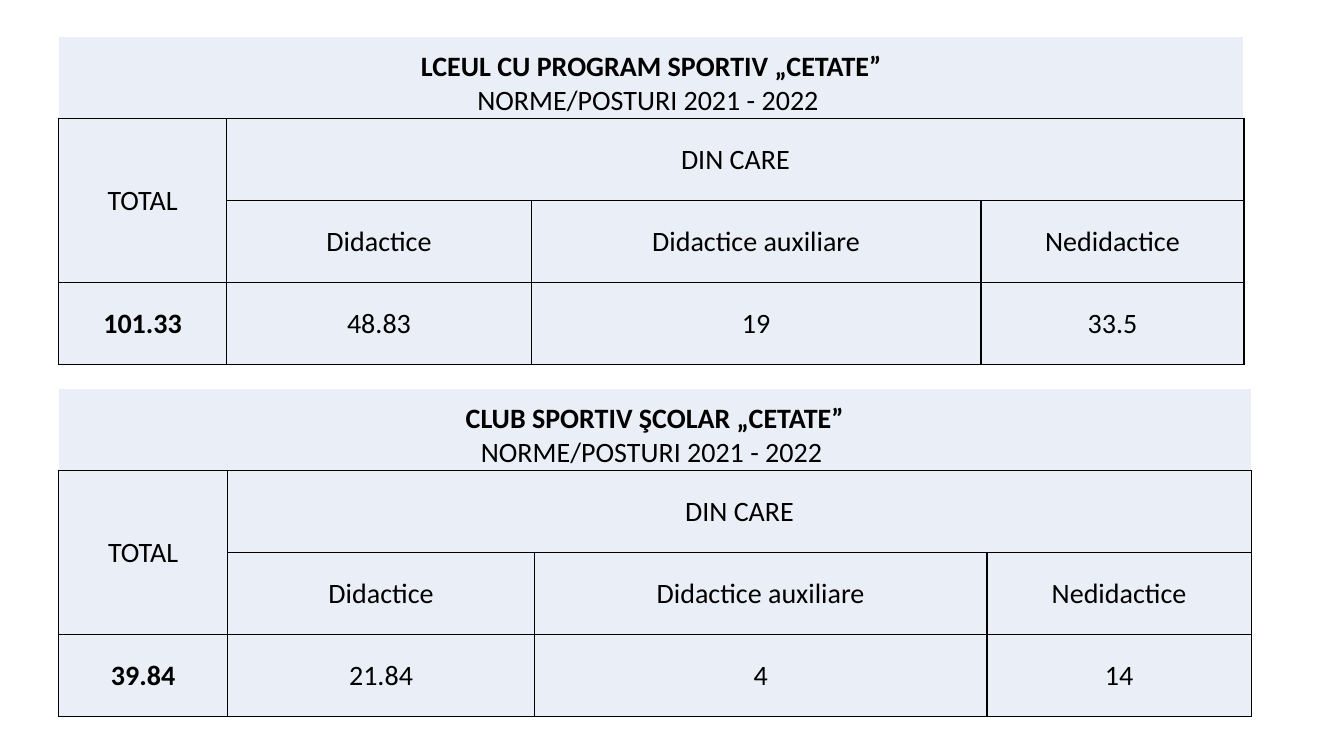
from dataclasses import dataclass

from lxml import etree
from pptx import Presentation
from pptx.dml.color import RGBColor
from pptx.enum.text import MSO_ANCHOR, PP_ALIGN
from pptx.oxml.ns import qn
from pptx.util import Inches, Pt

CENTER = PP_ALIGN.CENTER
MIDDLE, BOTTOM = MSO_ANCHOR.MIDDLE, MSO_ANCHOR.BOTTOM


@dataclass(frozen=True)
class Theme:
    """Colours, type and line sizes of the slide."""
    font: str = "Calibri"
    size: float = 20
    line: float = 1
    ink: str = "000000"
    paper: str = "FFFFFF"
    fill: str = "EAEFF7"


class Deck:
    """Draws styled elements on the current slide."""

    def __init__(self, prs, theme):
        self.theme = theme
        self.s = prs.slides.add_slide(prs.slide_layouts[6])

    def borders(self, cell, colors):
        """Draw the left, right, top and bottom borders of a cell."""
        tc_pr = cell._tc.get_or_add_tcPr()
        for side, color in zip("LRTB", colors):
            ln = etree.SubElement(tc_pr, qn(f"a:ln{side}"), w=str(Pt(self.theme.line)))
            solid = etree.SubElement(ln, qn("a:solidFill"))
            etree.SubElement(solid, qn("a:srgbClr"), val=color)

    def text(self, cell, lines, bold, anchor):
        """Write centred lines in a cell, the first one bold if asked."""
        inset = Inches(0.01)
        layout = {"margin_left": inset, "margin_right": inset, "margin_top": inset,
                  "margin_bottom": 0, "vertical_anchor": anchor}
        for name, value in layout.items():
            setattr(cell, name, value)
        tf = cell.text_frame
        for i, line in enumerate(lines):
            p = tf.add_paragraph() if i else tf.paragraphs[0]
            p.alignment = CENTER
            r = p.add_run()
            r.text = line
            style = {"name": self.theme.font, "size": Pt(self.theme.size),
                     "bold": bold and i == 0}
            for name, value in style.items():
                setattr(r.font, name, value)
            r.font.color.rgb = RGBColor.from_string(self.theme.ink)

    def staff_table(self, top, widths, title, values):
        """Add a table of posts with a title, two header rows and the values."""
        t = self.theme
        rows = [[title], ["TOTAL", "DIN CARE"],
                ["", "Didactice", "Didactice auxiliare", "Nedidactice"], values]
        height = Inches(3.26)
        frame = self.s.shapes.add_table(len(rows), len(widths), Inches(0.58), Inches(top),
                                        Inches(sum(widths)), height)
        table = frame.table
        for column, width in zip(table.columns, widths):
            column.width = Inches(width)
        for row in table.rows:
            row.height = height // len(rows)
        for i, row in enumerate(table.rows):
            for cell in row.cells:
                self.borders(cell, [t.ink] * 4 if i else [t.paper] * 3 + [t.ink])
                cell.fill.solid()
                cell.fill.fore_color.rgb = RGBColor.from_string(t.fill)
        for start, end in (((0, 0), (0, 3)), ((1, 0), (2, 0)), ((1, 1), (1, 3))):
            table.cell(*start).merge(table.cell(*end))
        for i, words in enumerate(rows):
            for j, word in enumerate(words):
                if word:
                    self.text(table.cell(i, j), word.split("\n"),
                              j == 0 and i in (0, 3), MIDDLE if i else BOTTOM)


def main():
    """Build and save the slide."""
    prs = Presentation()
    prs.slide_width, prs.slide_height = Inches(13.33), Inches(7.5)
    deck = Deck(prs, Theme())
    period = "NORME/POSTURI 2021 - 2022 "
    deck.staff_table(0.36, [1.67, 3.02, 4.46, 2.61],
                     f"LCEUL CU PROGRAM SPORTIV „CETATE”\n{period}",
                     ["101.33", "48.83", "19", "33.5"])
    deck.staff_table(3.85, [1.68, 3.04, 4.49, 2.62],
                     f"CLUB SPORTIV ŞCOLAR „CETATE”\n{period}",
                     ["39.84", "21.84", "4", "14"])
    prs.save("out.pptx")


if __name__ == "__main__":
    main()
